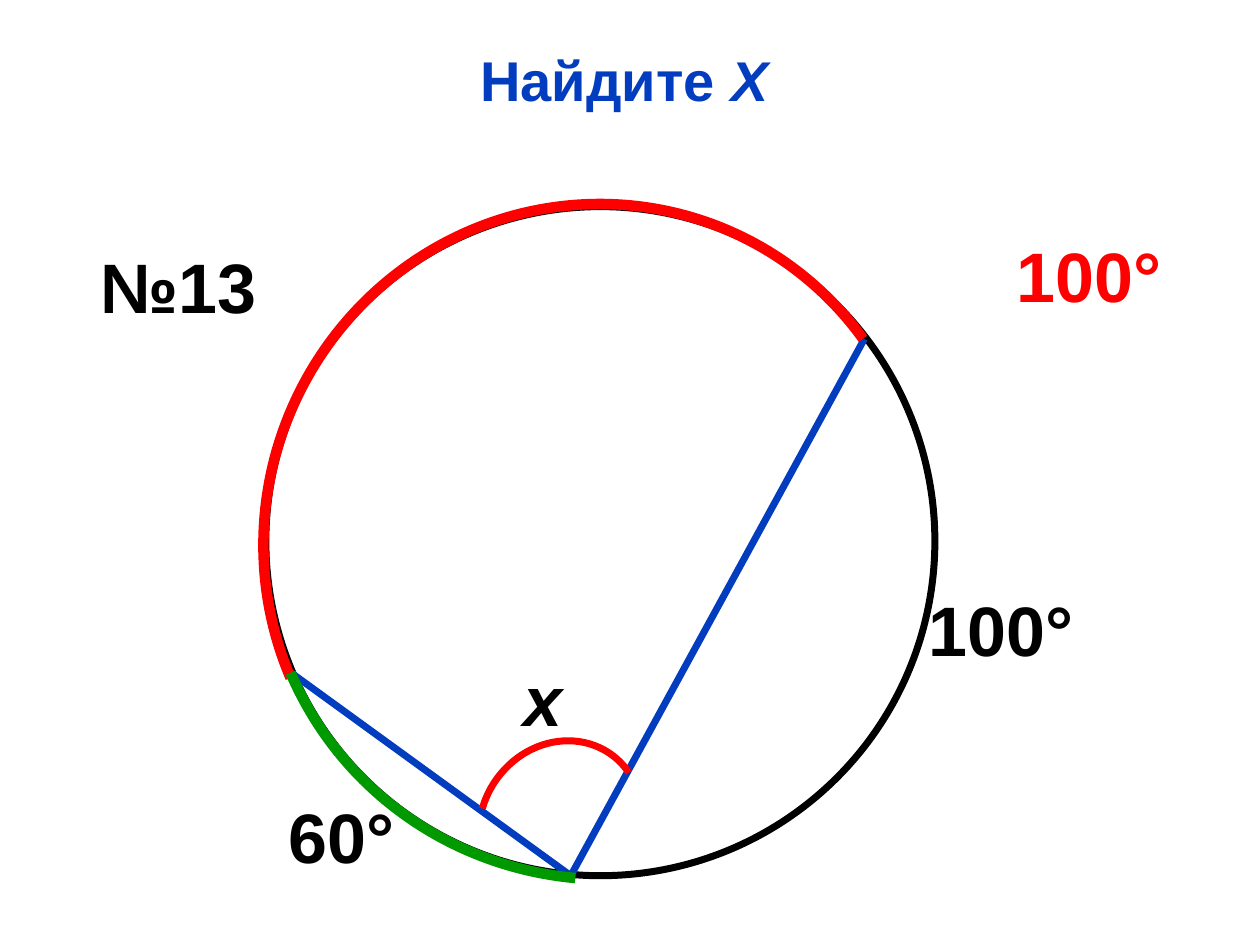
from dataclasses import dataclass

from lxml import etree
from pptx import Presentation
from pptx.dml.color import RGBColor
from pptx.enum.shapes import MSO_CONNECTOR, MSO_SHAPE
from pptx.enum.text import MSO_AUTO_SIZE, PP_ALIGN
from pptx.oxml.ns import qn
from pptx.util import Inches, Pt

ARC, ELLIPSE = MSO_SHAPE.ARC, MSO_SHAPE.OVAL
STRAIGHT = MSO_CONNECTOR.STRAIGHT
LEFT, CENTER = PP_ALIGN.LEFT, PP_ALIGN.CENTER
FIT_SHAPE = MSO_AUTO_SIZE.SHAPE_TO_FIT_TEXT


@dataclass(frozen=True)
class Theme:
    font: str = "Arial"
    title_size: int = 32
    label_size: int = 40
    thin: int = 4
    thick: int = 6
    white: RGBColor = RGBColor(0xFF, 0xFF, 0xFF)
    black: RGBColor = RGBColor(0, 0, 0)
    blue: RGBColor = RGBColor(0x03, 0x3D, 0xBF)
    red: RGBColor = RGBColor(0xFF, 0, 0)
    green: RGBColor = RGBColor(0, 0x99, 0)


THEME = Theme()


def set_line(shape, color, width):
    shape.line.color.rgb = color
    shape.line.width = Pt(width)


def add_text(slide, text, at, *, size=THEME.label_size, color=THEME.black,
             align=LEFT, italic=False, italic_tail="", wrap=True):
    """Add a bold one-line text; italic_tail follows it in italics."""
    box = slide.shapes.add_textbox(*map(Inches, at))
    frame = box.text_frame
    frame.word_wrap = wrap
    frame.auto_size = FIT_SHAPE
    para = frame.paragraphs[0]
    para.alignment = align
    for content, slanted in ((text, italic), (italic_tail, True)):
        if content:
            span = para.add_run()
            span.text = content
            span.font.name = THEME.font
            span.font.size = Pt(size)
            span.font.color.rgb = color
            span.font.bold = True
            span.font.italic = slanted


def add_circle(slide, at):
    circle = slide.shapes.add_shape(ELLIPSE, *map(Inches, at))
    circle.shadow.inherit = False
    circle.fill.solid()
    circle.fill.fore_color.rgb = THEME.white
    set_line(circle, THEME.black, THEME.thin)


def add_chord(slide, start, end):
    chord = slide.shapes.add_connector(STRAIGHT, *map(Inches, start + end))
    set_line(chord, THEME.blue, THEME.thin)
    etree.SubElement(chord._element.spPr, qn("a:effectLst"))


def add_arc(slide, at, rotation, angles, color, width):
    """Add an open arc between two angles in degrees, then rotate it."""
    arc = slide.shapes.add_shape(ARC, *map(Inches, at))
    arc.shadow.inherit = False
    arc.fill.background()
    arc.rotation = rotation
    for index, degrees in enumerate(angles):
        # Angles are stored in 1/60000 degree, adjustments in 1/100000.
        arc.adjustments[index] = degrees * 0.6
    set_line(arc, color, width)


def main():
    deck = Presentation()
    deck.slide_width, deck.slide_height = Inches(10), Inches(7.5)
    slide = deck.slides.add_slide(deck.slide_layouts[6])

    add_text(slide, "Найдите ", (0.62, 0.31, 8.67, 0.64), italic_tail="Х",
             size=THEME.title_size, color=THEME.blue, align=CENTER)

    add_circle(slide, (2.11, 1.64, 5.31, 5.31))
    vertex = (4.53, 6.95)
    for end in ((6.86, 2.69), (2.27, 5.31)):
        add_chord(slide, vertex, end)
    add_arc(slide, (3.82, 5.86, 1.26, 1.39), 213.1, (339.46, 108.82),
            THEME.red, THEME.thin)

    add_text(slide, "60°", (2.19, 6.25, 1.33, 0.77))
    add_text(slide, "100°", (7.27, 4.61, 1.36, 0.77), wrap=False)
    add_text(slide, "x", (4.06, 5.16, 0.78, 0.77), italic=True)
    add_text(slide, "№13", (0.7, 1.88, 1.64, 0.77))
    add_text(slide, "100°", (7.97, 1.8, 1.48, 0.77), color=THEME.red)

    add_arc(slide, (2.1, 1.61, 5.24, 5.35), 203.7, (311.9, 119.43),
            THEME.red, THEME.thick)
    add_arc(slide, (2.15, 1.15, 5.63, 5.9), 45.7, (52.21, 109.3),
            THEME.green, THEME.thick)

    deck.save("out.pptx")


if __name__ == "__main__":
    main()
